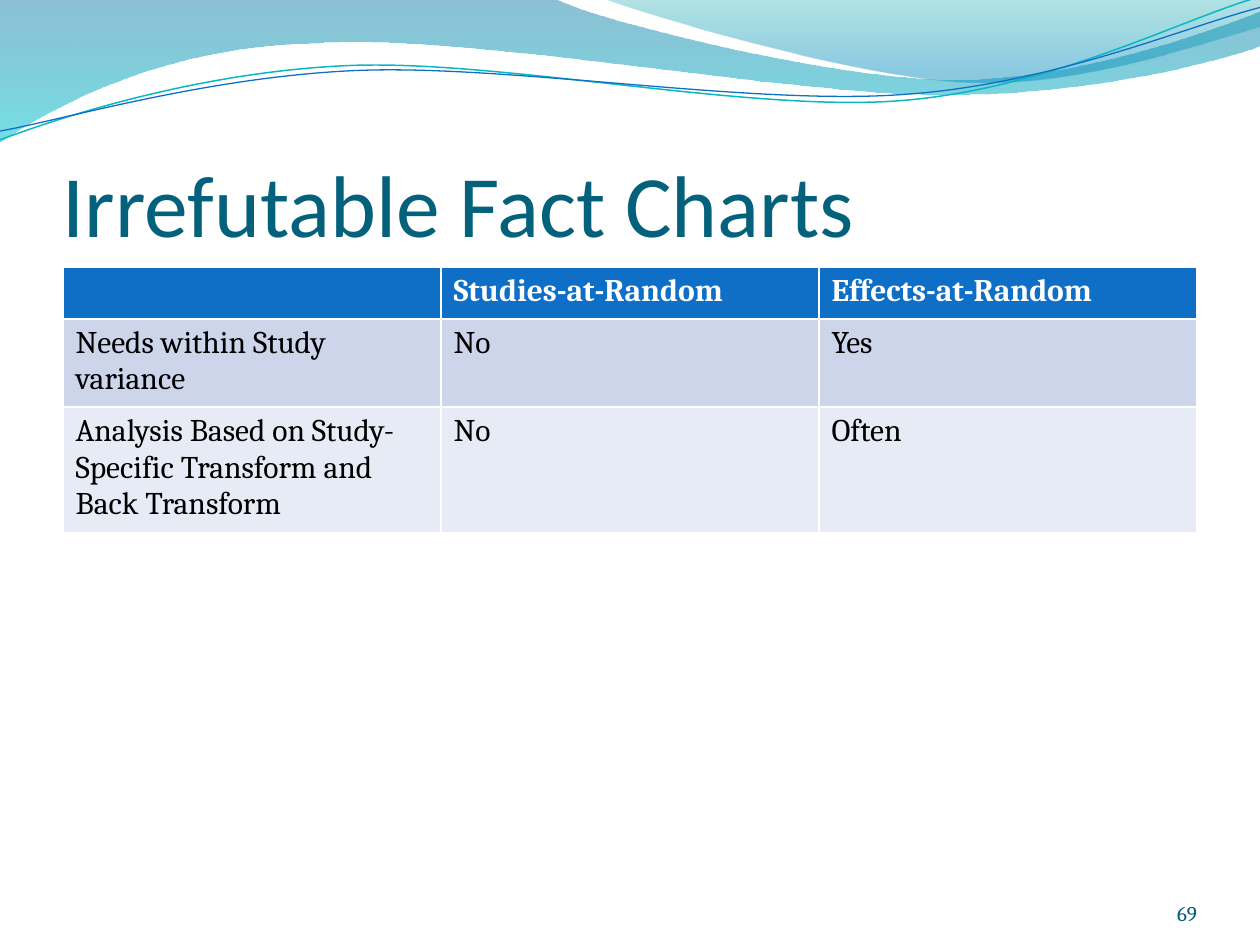
from math import cos, radians, sin
from lxml.etree import SubElement as Sub
from pptx import Presentation
from pptx.dml.color import RGBColor as RGB
from pptx.enum.text import MSO_ANCHOR as Anchor, PP_ALIGN as Align
from pptx.oxml.ns import qn
from pptx.util import Inches as In, Pt

WIDE, HIGH = 10, 7.5
EDGE = WIDE * 0.05
BODY = WIDE - 2 * EDGE
ROW = 0.41
TILT = -2.7

WAVES = [
    ([(0, 0), (4.4, -0.01),
      (4.76, 0.17, 6.64, 0.63, 7.58, 0.63), (8.53, 0.63, 9.58, 0.26, 10, 0.09),
      (10.01, 0.36),
      (9.83, 0.44, 8.7, 0.76, 7.46, 0.75), (6.22, 0.75, 3.82, 0.28, 2.57, 0.34),
      (1.29, 0.36, 0.46, 0.83, -0.01, 1.13), (0, 0)],
     [(0, "0074A1", 45), (1, "00C6CF", 55)]),
    ([(4.79, -0.01),
      (5.09, 0.11, 6.82, 0.62, 7.69, 0.65), (8.56, 0.69, 9.61, 0.32, 10, 0.21),
      (10, 0), (4.79, -0.01)],
     [(0, "00A1A9", 30), (0.8, "008BBF", 45)]),
]
CURVES = [
    ([(0, 1.11), (0.48, 0.93, 1.58, 0.57, 2.77, 0.52),
      (3.95, 0.47, 5.93, 0.89, 7.13, 0.8), (8.33, 0.71, 9.38, 0.15, 9.98, -0.02)],
     (4.99, 0.58), "0AB8BF", 0.85),
    ([(0, 1.04), (0.47, 0.96, 1.64, 0.61, 2.83, 0.56),
      (4.03, 0.51, 5.97, 0.84, 7.17, 0.75), (8.36, 0.67, 9.41, 0.21, 10, 0.06)],
     (5, 0.59), "0F6FC6", 0.75),
]
TITLE = "Irrefutable Fact Charts"
NUMBER = "69"
TABLE = [
    ("", "Studies-at-Random", "Effects-at-Random"),
    ("Needs within Study variance", "No", "Yes"),
    ("Analysis Based on Study-Specific Transform and Back Transform", "No", "Often"),
]
FILLS = ["0F6FC6", "CCD5EA", "E7EBF5"]


def rgb(code):
    return RGB.from_string(code)


def style(par, face, size, code, bold=False):
    font = par.font
    font.name, font.size, font.bold = face, Pt(size), bold
    font.color.rgb = rgb(code)


def pairs(step):
    return list(zip(step[::2], step[1::2]))


def level(path, hub):
    turn = radians(-TILT)
    flat = []
    for step in path:
        spots = [(x - hub[0], y - hub[1]) for x, y in pairs(step)]
        flat.append([v for x, y in spots
                     for v in (hub[0] + x * cos(turn) - y * sin(turn),
                               hub[1] + x * sin(turn) + y * cos(turn))])
    return flat


def draw(slide, path, close):
    spots = [(In(x), In(y)) for step in path for x, y in pairs(step)]
    pen = slide.shapes.build_freeform(*spots[0])
    pen.add_line_segments(spots[1:], close=close)
    shape = pen.convert_to_shape()
    shape.shadow.inherit = False
    lines = iter(list(shape.element.iter(qn("a:lnTo"))))
    for step in path[1:]:
        first = next(lines)
        if len(step) == 6:
            first.tag = qn("a:cubicBezTo")
            for _ in range(2):
                extra = next(lines)
                first.append(extra[0])
                extra.getparent().remove(extra)
    return shape


def add_wave(slide, path, stops):
    shape = draw(slide, path, True)
    shape.line.fill.background()
    shape.fill.gradient()
    shape.fill.gradient_angle = 270
    for stop, (place, code, _) in zip(shape.fill.gradient_stops, stops):
        stop.position = place
        stop.color.rgb = rgb(code)
    tones = shape.element.spPr.iter(qn("a:srgbClr"))
    for tone, (_, _, alpha) in zip(tones, stops):
        Sub(tone, qn("a:alpha"), val=str(alpha * 1000))


def add_curve(slide, path, hub, code, width):
    shape = draw(slide, level(path, hub), False)
    shape.rotation = TILT
    shape.fill.background()
    shape.line.color.rgb = rgb(code)
    shape.line.width = Pt(width)


def add_text(slide, text, box, look, align=Align.LEFT, top=0):
    frame = slide.shapes.add_textbox(*map(In, box)).text_frame
    frame.word_wrap = True
    frame.vertical_anchor = Anchor.BOTTOM
    frame.margin_left = frame.margin_right = frame.margin_bottom = 0
    frame.margin_top = In(top)
    par = frame.paragraphs[0]
    par.text, par.alignment = text, align
    style(par, *look)


def add_grid(slide):
    count = len(TABLE)
    grid = slide.shapes.add_table(count, len(TABLE[0]), In(EDGE), In(2.12),
                                  In(BODY), In(ROW * count)).table
    for r, words in enumerate(TABLE):
        for c, word in enumerate(words):
            cell = grid.cell(r, c)
            cell.fill.solid()
            cell.fill.fore_color.rgb = rgb(FILLS[r])
            if word:
                cell.text = word
                code = "000000" if r else "FFFFFF"
                style(cell.text_frame.paragraphs[0], "Cambria", 18, code, r == 0)


def main():
    deck = Presentation()
    deck.slide_width, deck.slide_height = In(WIDE), In(HIGH)
    slide = deck.slides.add_slide(deck.slide_layouts[6])
    for wave in WAVES:
        add_wave(slide, *wave)
    for curve in CURVES:
        add_curve(slide, *curve)
    add_text(slide, TITLE, (EDGE, 0.77, BODY, 1.25), ("Calibri", 50, "04617B"), top=0.05)
    add_grid(slide)
    add_text(slide, NUMBER, (8.67, 6.95, 0.83, 0.4), ("Cambria", 12, "045D75"), Align.RIGHT)
    deck.save("out.pptx")


if __name__ == "__main__":
    main()
